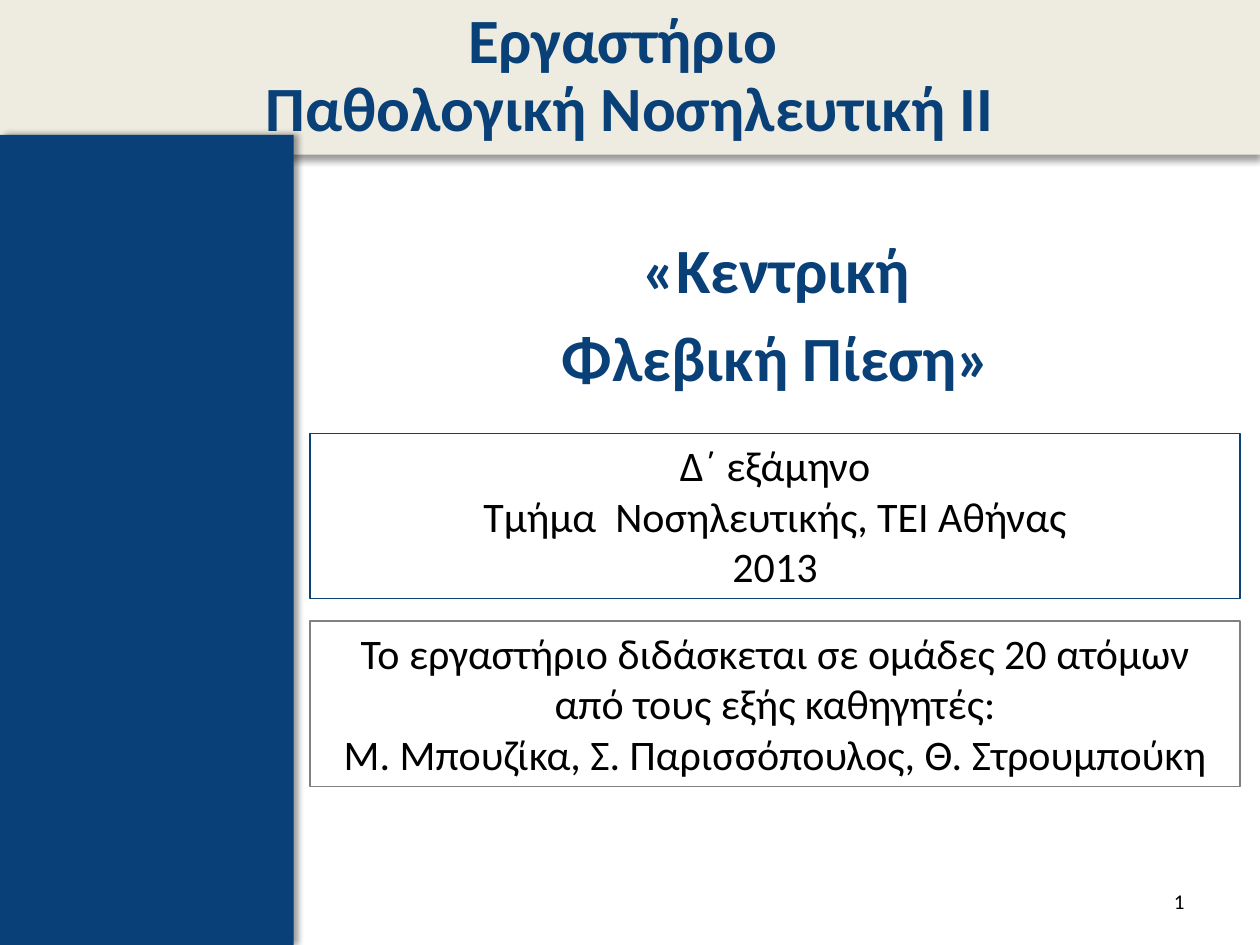
from dataclasses import dataclass

from lxml.etree import SubElement
from pptx import Presentation
from pptx.dml.color import RGBColor
from pptx.enum.shapes import MSO_SHAPE as Form
from pptx.enum.text import MSO_ANCHOR as Anchor, MSO_AUTO_SIZE as Fit, PP_ALIGN as Align
from pptx.oxml.ns import qn
from pptx.util import Cm, Pt

NAVY = RGBColor(0x08, 0x40, 0x77)
CREAM = RGBColor(0xEE, 0xEC, 0xE1)
GREY = RGBColor(0x80, 0x80, 0x80)
BLACK = RGBColor(0, 0, 0)


@dataclass
class Style:
    size: int
    tint: RGBColor
    bold: bool = False
    align: Align = Align.CENTER


@dataclass
class Box:
    top: float
    edge: RGBColor
    lines: list[str]


HEAD = Style(36, NAVY, True)
TEXT = Style(24, BLACK)
FOOT = Style(12, BLACK, align=Align.RIGHT)

BOXES = [
    Box(8.74, NAVY, ["Δ΄ εξάμηνο", "Τμήμα  Νοσηλευτικής, ΤΕΙ Αθήνας", "2013"]),
    Box(12.52, GREY, [
        "Το εργαστήριο διδάσκεται σε ομάδες 20 ατόμων από τους εξής καθηγητές:",
        "Μ. Μπουζίκα, Σ. Παρισσόπουλος, Θ. Στρουμπούκη",
    ]),
]


def place(shape, left: float, top: float, width: float, height: float) -> None:
    shape.left, shape.top = Cm(left), Cm(top)
    shape.width, shape.height = Cm(width), Cm(height)


def add_run(para, text: str, style: Style) -> None:
    run = para.add_run()
    run.text = text
    font = run.font
    font.name, font.size, font.bold = "Calibri", Pt(style.size), style.bold
    font.color.rgb = style.tint


def write(frame, lines: list[str], style: Style) -> None:
    frame.word_wrap = True
    for i, line in enumerate(lines):
        para = frame.add_paragraph() if i else frame.paragraphs[0]
        para.alignment = style.align
        add_run(para, line, style)


def paint(shape, tint: RGBColor, angle: int) -> None:
    shape.fill.solid()
    shape.fill.fore_color.rgb = tint
    shape.line.fill.background()
    shape.shadow.inherit = False
    group = shape.element.spPr.find(qn("a:effectLst"))
    shade = SubElement(group, qn("a:outerShdw"), blurRad=str(Pt(4)), dist=str(Pt(3)),
                       dir=str(angle * 60000), algn="t", rotWithShape="0")
    tone = SubElement(shade, qn("a:srgbClr"), val="000000")
    SubElement(tone, qn("a:alpha"), val="40000")


def draw_title(title) -> None:
    place(title, 0, 0, 25.4, 3.12)
    paint(title, CREAM, 90)
    frame = title.text_frame
    frame.auto_size = Fit.NONE
    frame.vertical_anchor = Anchor.MIDDLE
    write(frame, ["Εργαστήριο "], HEAD)
    para = frame.paragraphs[0]
    para.line_spacing = 0.9
    para.add_line_break()
    add_run(para, "Παθολογική Νοσηλευτική ΙΙ", HEAD)


def draw_body(body) -> None:
    place(body, 5.92, 4.52, 19.46, 12.8)
    frame = body.text_frame
    frame.auto_size = Fit.NONE
    write(frame, ["«Κεντρική", "Φλεβική Πίεση»"], HEAD)
    for para in frame.paragraphs:
        para.space_before = Pt(7.2)
        SubElement(para._p.get_or_add_pPr(), qn("a:buNone"))


def draw_box(shapes, box: Box) -> None:
    shape = shapes.add_textbox(Cm(6.25), Cm(box.top), Cm(18.75), Cm(3.33))
    shape.line.color.rgb = box.edge
    shape.line.width = Pt(0.75)
    write(shape.text_frame, box.lines, TEXT)
    shape.text_frame.auto_size = Fit.SHAPE_TO_FIT_TEXT


def main() -> None:
    deck = Presentation()
    deck.slide_width, deck.slide_height = Cm(25.4), Cm(19.05)
    slide = deck.slides.add_slide(deck.slide_layouts[1])
    shapes = slide.shapes
    draw_title(shapes.title)
    draw_body(slide.placeholders[1])
    band = shapes.add_shape(Form.RECTANGLE, 0, Cm(2.72), Cm(5.92), Cm(16.33))
    paint(band, NAVY, 0)
    for box in BOXES:
        draw_box(shapes, box)
    page = shapes.add_textbox(Cm(18.21), Cm(17.65), Cm(5.92), Cm(1.02)).text_frame
    page.vertical_anchor = Anchor.MIDDLE
    write(page, ["1"], FOOT)
    deck.save("out.pptx")


if __name__ == "__main__":
    main()
